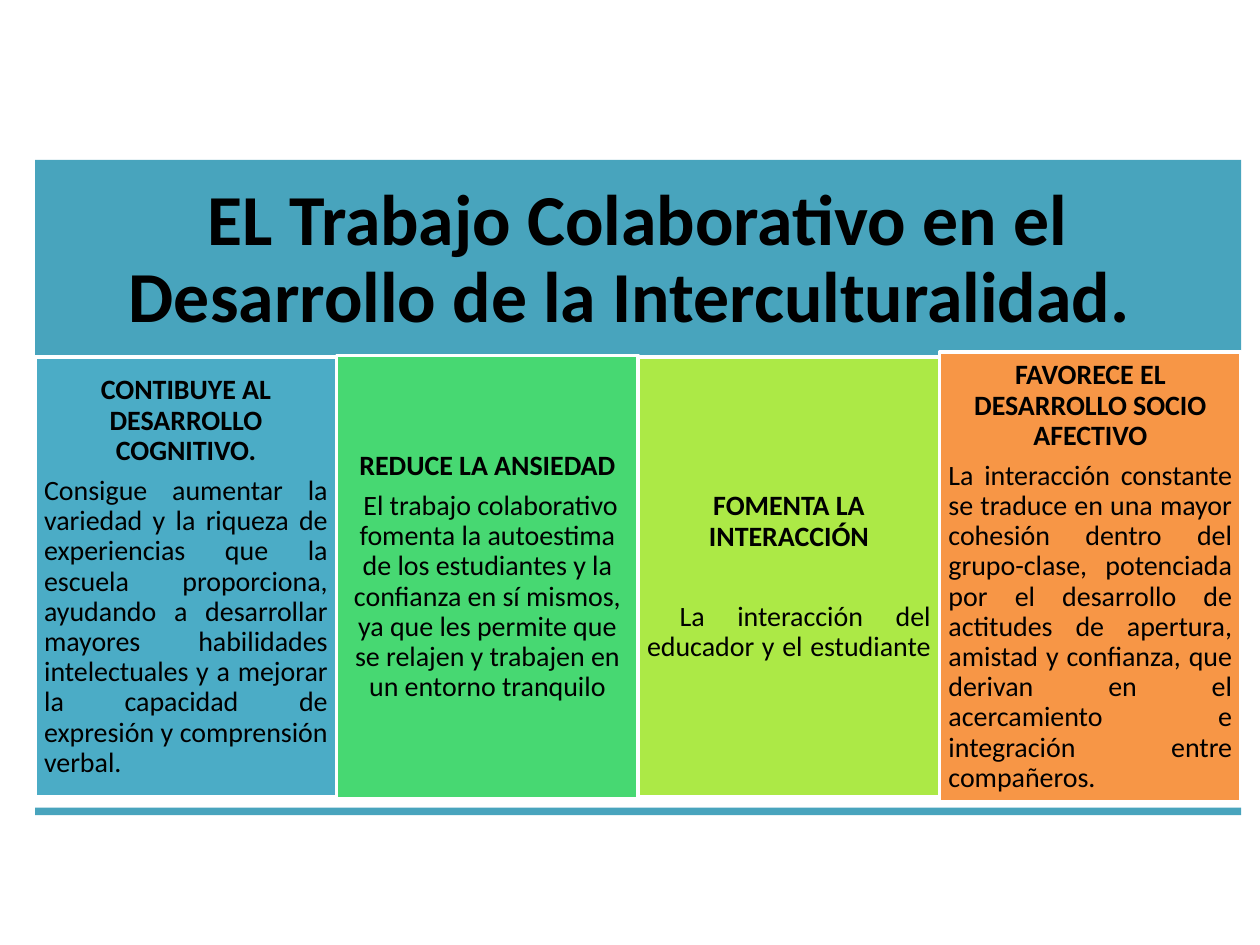
from dataclasses import dataclass

from pptx import Presentation
from pptx import util as u
from pptx.dml.color import RGBColor
from pptx.enum import shapes, text


@dataclass(frozen=True)
class Theme:
    font: str = "Calibri"
    ink: str = "000000"
    border: str = "FFFFFF"
    banner: str = "48A4BD"
    title_size: float = 41
    body_size: float = 16
    line_spacing: float = 0.9
    space_share: float = 0.35  # space after, as a share of the type size


THEME = Theme()
CENTER, JUSTIFY = text.PP_ALIGN.CENTER, text.PP_ALIGN.JUSTIFY

# Grid in inches: four equal columns under a banner, centred on one axis
LEFT, WIDTH = 0.28, 9.57
COLUMN_WIDTH = WIDTH / 4
COLUMN_MIDDLE = 4.58

# Heading, body, body alignment, fill, column height, extra gap under heading
COLUMNS = [
    ("CONTIBUYE AL DESARROLLO COGNITIVO.",
     "Consigue aumentar la variedad y la riqueza de experiencias que la escuela "
     "proporciona, ayudando a desarrollar mayores habilidades intelectuales y a "
     "mejorar la capacidad de expresión y comprensión verbal. ",
     JUSTIFY, "4BACC6", 3.49, 0),
    ("REDUCE LA ANSIEDAD",
     " El trabajo colaborativo fomenta la autoestima de los estudiantes y la "
     "confianza en sí mismos, ya que les permite que se relajen y trabajen en un "
     "entorno tranquilo",
     CENTER, "47D872", 3.52, 0),
    ("FOMENTA LA INTERACCIÓN",
     " La interacción del educador y el estudiante ",
     JUSTIFY, "ACE946", 3.49, 23),
    ("FAVORECE EL DESARROLLO SOCIO AFECTIVO",
     "La interacción constante se traduce en una mayor cohesión dentro del "
     "grupo-clase, potenciada por el desarrollo de actitudes de apertura, amistad "
     "y confianza, que derivan en el acercamiento e integración entre compañeros.",
     JUSTIFY, "F79646", 3.57, 0),
]


def add_block(slide, left, top, width, height, fill, bordered=False):
    shape = slide.shapes.add_shape(
        shapes.MSO_SHAPE.RECTANGLE, *map(u.Inches, (left, top, width, height)))
    shape.shadow.inherit = False
    shape.fill.solid()
    shape.fill.fore_color.rgb = RGBColor.from_string(fill)
    if bordered:
        shape.line.color.rgb = RGBColor.from_string(THEME.border)
        shape.line.width = u.Pt(2)
    else:
        shape.line.fill.background()
    return shape


def prepare_frame(shape, inset):
    frame = shape.text_frame
    frame.word_wrap = True
    frame.vertical_anchor = text.MSO_ANCHOR.MIDDLE
    frame.margin_left = frame.margin_right = u.Inches(inset)
    frame.margin_top = frame.margin_bottom = u.Inches(inset)
    return frame


def write_paragraph(paragraph, wording, size, bold, alignment=CENTER, extra_gap=0):
    paragraph.text = wording
    paragraph.alignment = alignment
    paragraph.line_spacing = THEME.line_spacing
    paragraph.space_after = u.Pt(size * THEME.space_share + extra_gap)
    font = paragraph.font
    font.name, font.size, font.bold = THEME.font, u.Pt(size), bold
    font.color.rgb = RGBColor.from_string(THEME.ink)


def add_banner(slide, wording):
    banner = add_block(slide, LEFT, 1.27, WIDTH, 1.6, THEME.banner)
    frame = prepare_frame(banner, 0.17)
    write_paragraph(frame.paragraphs[0], wording, THEME.title_size, True)


def add_column(slide, index, heading, body, alignment, fill, height, gap):
    block = add_block(slide, LEFT + index * COLUMN_WIDTH, COLUMN_MIDDLE - height / 2,
                      COLUMN_WIDTH, height, fill, bordered=True)
    frame = prepare_frame(block, 0.07)
    write_paragraph(frame.paragraphs[0], heading, THEME.body_size, True, extra_gap=gap)
    write_paragraph(frame.add_paragraph(), body, THEME.body_size, False, alignment)


def main():
    presentation = Presentation()
    presentation.slide_width, presentation.slide_height = u.Inches(10), u.Inches(7.5)
    slide = presentation.slides.add_slide(presentation.slide_layouts[6])

    # Title banner
    add_banner(slide, "EL Trabajo Colaborativo en el Desarrollo de la Interculturalidad. ")

    # Four benefits side by side
    for index, column in enumerate(COLUMNS):
        add_column(slide, index, *column)

    # Closing bar
    add_block(slide, LEFT, 6.41, WIDTH, 0.06, THEME.banner)

    presentation.save("out.pptx")


if __name__ == "__main__":
    main()
